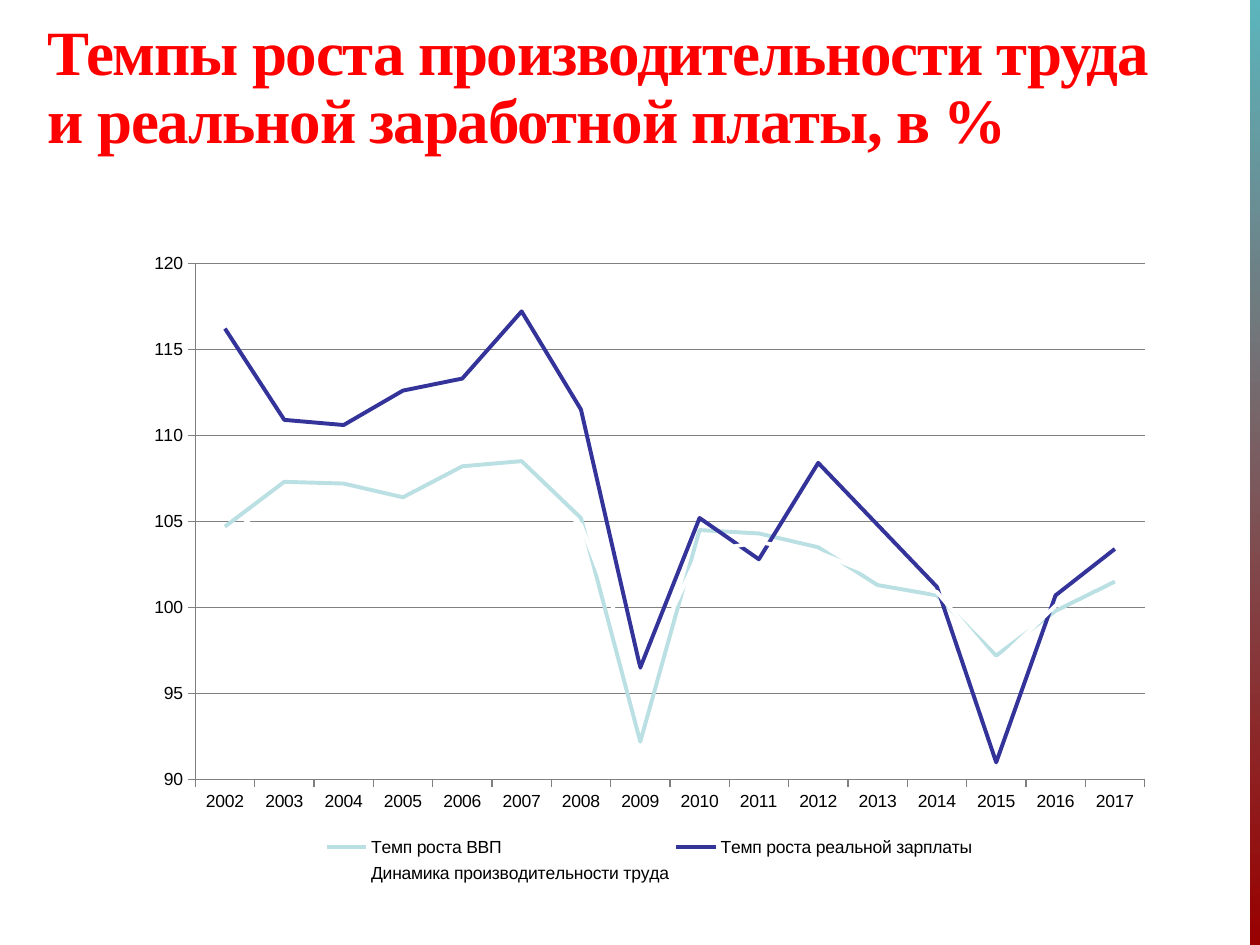
from lxml import etree
from pptx import Presentation
from pptx.chart.data import CategoryChartData
from pptx.dml.color import RGBColor
from pptx.enum import chart as ch, shapes, text
from pptx.oxml.ns import qn
from pptx.util import Cm, Pt

RED = RGBColor(0xFF, 0, 0)
TEAL = RGBColor(0x5C, 0xB5, 0xBC)
WINE = RGBColor(0x99, 0, 0)
BLACK = RGBColor(0, 0, 0)
GREY = RGBColor(0x80, 0x80, 0x80)
AQUA = RGBColor(0xBB, 0xE0, 0xE3)
NAVY = RGBColor(0x33, 0x33, 0x99)
WHITE = RGBColor(0xFF, 0xFF, 0xFF)

TITLE = "Темпы роста производительности труда и реальной заработной платы, в %"
YEARS = [str(year) for year in range(2002, 2018)]
RATES = [
    ("Темп роста ВВП", AQUA,
     [104.7, 107.3, 107.2, 106.4, 108.2, 108.5, 105.2, 92.2,
      104.5, 104.3, 103.5, 101.3, 100.7, 97.2, 99.8, 101.5]),
    ("Темп роста реальной зарплаты", NAVY,
     [116.2, 110.9, 110.6, 112.6, 113.3, 117.2, 111.5, 96.5,
      105.2, 102.8, 108.4, 104.8, 101.2, 91, 100.7, 103.4]),
    ("Динамика производительности труда", WHITE,
     [103.8, 107, 106.5, 105.5, 107.5, 107.5, 104.8, 95.9,
      103.2, 103.8, 103.2, 101.8, 100.9, 96.8, 100.1, 101.9]),
]


def add_band(slide):
    band = slide.shapes.add_shape(
        shapes.MSO_SHAPE.RECTANGLE, Cm(25.2), 0, Cm(0.2), Cm(19.05))
    band.shadow.inherit = False
    band.line.fill.background()
    band.fill.gradient()
    band.fill.gradient_angle = 270
    for stop, color, place in zip(band.fill.gradient_stops, (TEAL, WINE), (0, 1)):
        stop.color.rgb = color
        stop.position = place


def set_title(slide):
    title = slide.shapes.title
    title.left, title.top = Cm(0.71), Cm(0.41)
    title.width, title.height = Cm(23.22), Cm(2.77)
    frame = title.text_frame
    frame.text = TITLE
    frame.word_wrap = True
    frame.auto_size = text.MSO_AUTO_SIZE.NONE
    frame.vertical_anchor = text.MSO_ANCHOR.MIDDLE
    para = frame.paragraphs[0]
    para.alignment = text.PP_ALIGN.LEFT
    para.line_spacing = 0.9
    run = para.runs[0]
    font = run.font
    font.name, font.size, font.bold = "Times New Roman", Pt(36), True
    font.color.rgb = RED
    run._r.get_or_add_rPr().set("spc", "-70")


def set_place(part, index, inner=False, **box):
    """Fix a chart part at fractions x, y, w, h of the chart."""
    for old in part.findall(qn("c:layout")):
        part.remove(old)
    layout = etree.Element(qn("c:layout"))
    manual = etree.SubElement(layout, qn("c:manualLayout"))
    marks = {"layoutTarget": "inner"} if inner else {}
    marks.update(xMode="edge", yMode="edge", **box)
    for name, value in marks.items():
        etree.SubElement(manual, qn("c:" + name)).set("val", str(value))
    part.insert(index, layout)


def style_axis(axis):
    axis.major_tick_mark = ch.XL_TICK_MARK.OUTSIDE
    axis.minor_tick_mark = ch.XL_TICK_MARK.NONE
    axis.format.line.color.rgb = GREY
    axis.format.line.width = Pt(0.75)


def add_rates(slide):
    data = CategoryChartData(number_format="General")
    data.categories = YEARS
    for name, _, values in RATES:
        data.add_series(name, values)
    chart = slide.shapes.add_chart(
        ch.XL_CHART_TYPE.LINE, Cm(2.69), Cm(4.85), Cm(20.8), Cm(13.08), data).chart
    chart.has_title = False
    chart.font.name, chart.font.size = "Arial", Pt(10)
    chart.font.color.rgb = BLACK

    # Lines
    plot = chart.plots[0]
    plot.vary_by_categories = False
    for line, (_, color, _) in zip(plot.series, RATES):
        line.smooth = False
        line.marker.style = ch.XL_MARKER_STYLE.NONE
        line.format.line.color.rgb = color
        line.format.line.width = Pt(2.25)

    # Axes
    style_axis(chart.category_axis)
    axis = chart.value_axis
    style_axis(axis)
    axis.minimum_scale, axis.maximum_scale, axis.major_unit = 90, 120, 5
    axis.tick_labels.number_format = "#,##0"
    axis.tick_labels.number_format_is_linked = False
    axis.has_major_gridlines = True
    axis.major_gridlines.format.line.color.rgb = GREY
    axis.major_gridlines.format.line.width = Pt(0.75)

    # Legend and plot places
    chart.has_legend = True
    legend = chart.legend
    legend.position = ch.XL_LEGEND_POSITION.BOTTOM
    legend.include_in_layout = False
    set_place(legend._element, 1, x=0.18, y=0.91, w=0.64, h=0.09)
    area = chart._chartSpace.find(".//" + qn("c:plotArea"))
    set_place(area, 0, inner=True, x=0.06, y=0.035, w=0.92, h=0.796)


def main():
    deck = Presentation()
    deck.slide_width, deck.slide_height = Cm(25.4), Cm(19.05)
    slide = deck.slides.add_slide(deck.slide_layouts[5])
    add_band(slide)
    set_title(slide)
    add_rates(slide)
    deck.save("out.pptx")


if __name__ == "__main__":
    main()
